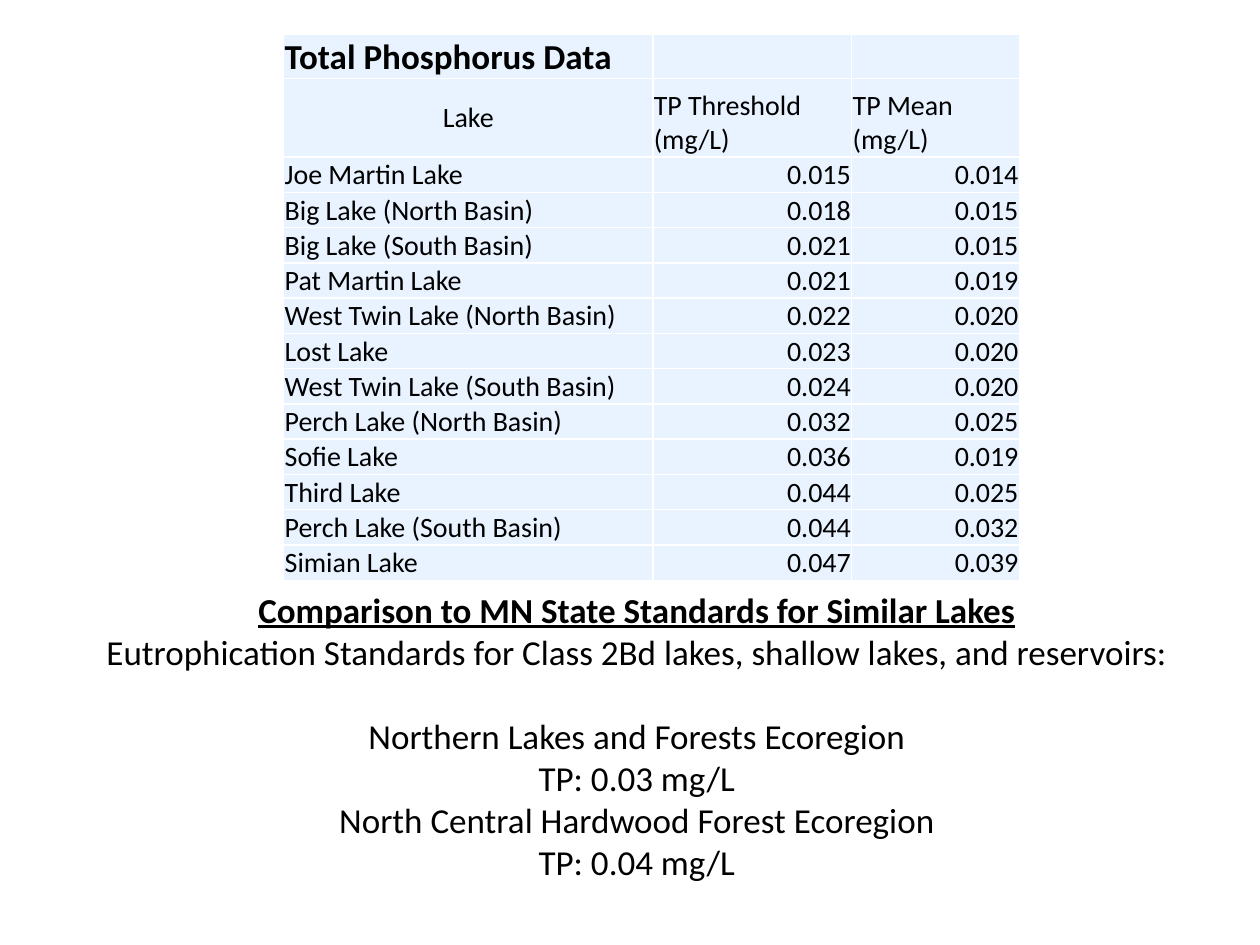
from lxml import etree
from pptx import Presentation
from pptx.dml.color import RGBColor
from pptx.enum.text import MSO_ANCHOR as Anchor, MSO_AUTO_SIZE as AutoSize, PP_ALIGN as Align
from pptx.oxml.ns import qn
from pptx.util import Cm, Pt

COLORS = {"text": "000000", "cell": "E8F3FF", "border": "FFFFFF"}

LAKES = [
    ("Joe Martin Lake", "0.015", "0.014"),
    ("Big Lake (North Basin)", "0.018", "0.015"),
    ("Big Lake (South Basin)", "0.021", "0.015"),
    ("Pat Martin Lake", "0.021", "0.019"),
    ("West Twin Lake (North Basin)", "0.022", "0.020"),
    ("Lost Lake", "0.023", "0.020"),
    ("West Twin Lake (South Basin)", "0.024", "0.020"),
    ("Perch Lake (North Basin)", "0.032", "0.025"),
    ("Sofie Lake", "0.036", "0.019"),
    ("Third Lake", "0.044", "0.025"),
    ("Perch Lake (South Basin)", "0.044", "0.032"),
    ("Simian Lake", "0.047", "0.039"),
]
HEADINGS = ("Lake", "TP Threshold (mg/L)", "TP Mean (mg/L)")
TITLE = "Total Phosphorus Data"

STANDARDS = [
    ("Comparison to MN State Standards for Similar Lakes", {"bold": True, "underline": True}),
    ("Eutrophication Standards for Class 2Bd lakes, shallow lakes, and reservoirs:", {}),
    ("Northern Lakes and Forests Ecoregion", {"before": 24}),
    ("TP: 0.03 mg/L", {}),
    ("North Central Hardwood Forest Ecoregion", {}),
    ("TP: 0.04 mg/L", {}),
]


def write(para, text, font="Calibri", size=20, color=COLORS["text"], bold=False,
          underline=False, align=Align.LEFT, before=0):
    para.alignment = align
    para.space_before = Pt(before)
    span = para.add_run()
    span.text = text
    span.font.name = font
    span.font.size = Pt(size)
    span.font.bold = bold
    span.font.underline = underline
    span.font.color.rgb = RGBColor.from_string(color)


class SlideBuilder:
    def __init__(self, slide, font="Calibri"):
        self.slide = slide
        self.font = font

    def style_cell(self, cell, anchor):
        """Set the insets, white borders and fill of a cell."""
        cell.margin_left = cell.margin_right = cell.margin_top = Cm(0.02)
        cell.margin_bottom = 0
        cell.vertical_anchor = anchor
        properties = cell._tc.get_or_add_tcPr()
        for side in ("a:lnL", "a:lnR", "a:lnT", "a:lnB"):
            line = etree.SubElement(properties, qn(side), w=str(Pt(1)))
            fill = etree.SubElement(line, qn("a:solidFill"))
            etree.SubElement(fill, qn("a:srgbClr"), val=COLORS["border"])
        cell.fill.solid()
        cell.fill.fore_color.rgb = RGBColor.from_string(COLORS["cell"])

    def table(self, left, top, widths, heights, rows):
        frame = self.slide.shapes.add_table(
            len(rows), len(widths), Cm(left), Cm(top), Cm(sum(widths)), Cm(sum(heights)))
        table = frame.table
        for column, width in zip(table.columns, widths):
            column.width = Cm(width)
        for row, height, values in zip(table.rows, heights, rows):
            row.height = Cm(height)
            for cell, (text, style) in zip(row.cells, values):
                style = dict(style)
                self.style_cell(cell, style.pop("anchor", Anchor.BOTTOM))
                if text:
                    write(cell.text_frame.paragraphs[0], text, font=self.font, **style)

    def text(self, left, top, width, height, lines, **style):
        box = self.slide.shapes.add_textbox(Cm(left), Cm(top), Cm(width), Cm(height))
        frame = box.text_frame
        frame.word_wrap = True
        frame.auto_size = AutoSize.SHAPE_TO_FIT_TEXT
        for index, (line, extra) in enumerate(lines):
            para = frame.add_paragraph() if index else frame.paragraphs[0]
            write(para, line, font=self.font, **{**style, **extra})


def table_rows():
    label = {"size": 16}
    centered = {"size": 16, "align": Align.CENTER, "anchor": Anchor.MIDDLE}
    number = {"size": 16, "align": Align.RIGHT}
    title_row = [(TITLE, {"bold": True}), ("", {}), ("", {})]
    heading_row = list(zip(HEADINGS, (centered, label, label)))
    return [title_row, heading_row] + [list(zip(lake, (label, number, number))) for lake in LAKES]


def main():
    deck = Presentation()
    deck.slide_width, deck.slide_height = Cm(25.4), Cm(19.05)
    builder = SlideBuilder(deck.slides.add_slide(deck.slide_layouts[6]))
    builder.table(5.72, 0.7, widths=(7.44, 4.01, 3.38),
                  heights=[0.71, 1.58] + [0.71] * len(LAKES), rows=table_rows())
    builder.text(0, 11.73, 25.68, 6.25, STANDARDS, align=Align.CENTER)
    deck.save("out.pptx")


if __name__ == "__main__":
    main()
